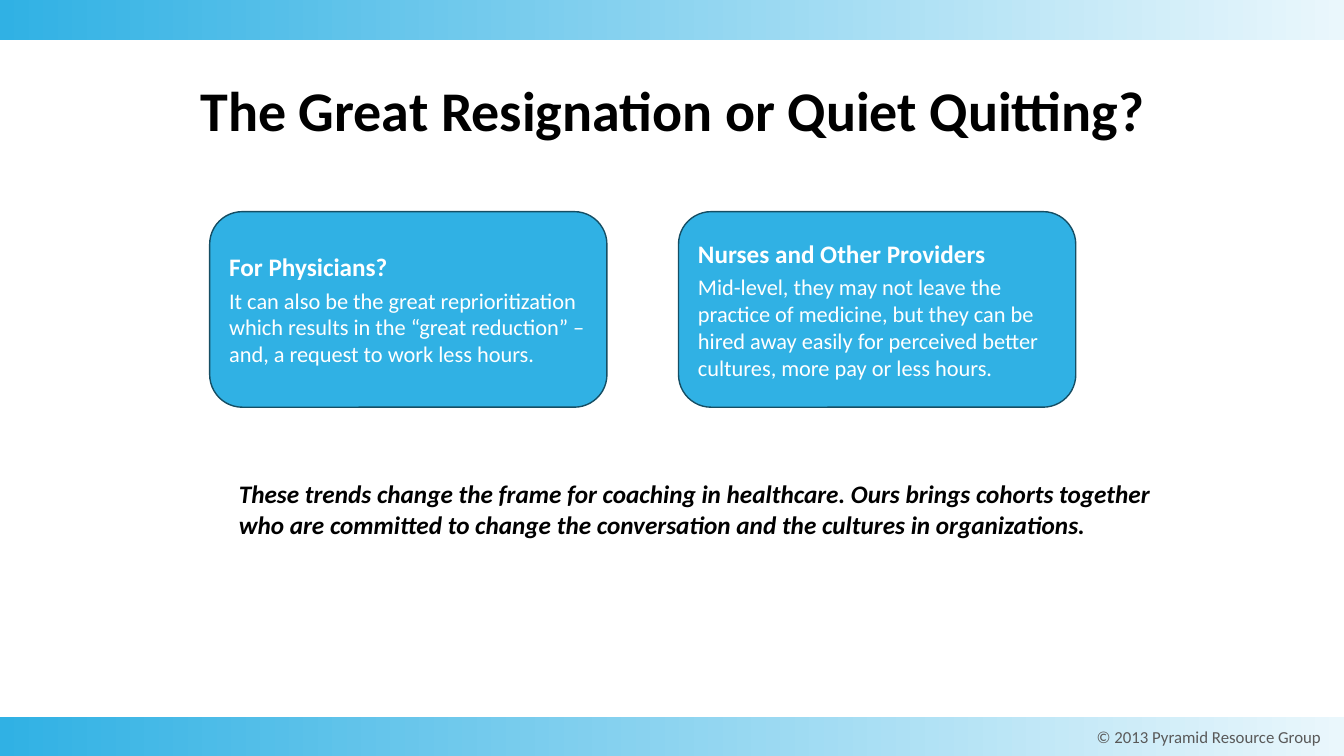
from pptx import Presentation
from pptx.dml.color import RGBColor
from pptx.enum.shapes import MSO_SHAPE as Shape
from pptx.enum.text import MSO_ANCHOR as Anchor, PP_ALIGN as Align
from pptx.util import Inches, Pt

# Content
TITLE = "The Great Resignation or Quiet Quitting?"
CARDS = [
    ("For Physicians?",
     "It can also be the great reprioritization which results in the “great reduction” – "
     "and, a request to work less hours."),
    ("Nurses and Other Providers",
     "Mid-level, they may not leave the practice of medicine, but they can be hired away "
     "easily for perceived better cultures, more pay or less hours."),
]
CONCLUSION = ("These trends change the frame for coaching in healthcare. Ours brings cohorts "
              "together who are committed to change the conversation and the cultures in "
              "organizations.")
COPYRIGHT = "© 2013 Pyramid Resource Group"

# Layout in inches
WIDTH, HEIGHT = 13.33, 7.5
BAND_HEIGHT = 0.4
BAND_TOPS = (HEIGHT - BAND_HEIGHT + 0.01, 0)
CARD_LEFT, CARD_TOP, CARD_WIDTH, CARD_HEIGHT, CARD_GAP = 2.08, 2.1, 3.94, 1.94, 0.71
FOOTER_WIDTH = 2.68

BLUE, PALE_BLUE, DARK_BLUE = "30B1E4", "EAF7FC", "154E64"
WHITE, BLACK, GRAY = "FFFFFF", "000000", "595959"


def color(hex_value):
    return RGBColor.from_string(hex_value)


def style(paragraph, size, hex_value, bold=False, italic=False, align=Align.LEFT):
    paragraph.alignment = align
    for run in paragraph.runs:
        font = run.font
        font.name, font.size = "Calibri", Pt(size)
        font.bold, font.italic = bold, italic
        font.color.rgb = color(hex_value)


def add_shape(slide, kind, *box):
    shape = slide.shapes.add_shape(kind, *map(Inches, box))
    shape.shadow.inherit = False
    return shape


def add_band(slide, top):
    band = add_shape(slide, Shape.RECTANGLE, 0, top, WIDTH, BAND_HEIGHT)
    band.line.fill.background()
    band.fill.gradient()
    band.fill.gradient_angle = 0
    for stop, hex_value, position in zip(band.fill.gradient_stops, (BLUE, PALE_BLUE), (0, 1)):
        stop.color.rgb = color(hex_value)
        stop.position = position


def add_text(slide, box, text, anchor=Anchor.TOP, **look):
    frame = slide.shapes.add_textbox(*map(Inches, box)).text_frame
    frame.word_wrap = True
    frame.vertical_anchor = anchor
    frame.text = text
    style(frame.paragraphs[0], **look)
    return frame.paragraphs[0]


def add_card(slide, column, heading, body):
    left = CARD_LEFT + column * (CARD_WIDTH + CARD_GAP)
    card = add_shape(slide, Shape.ROUNDED_RECTANGLE, left, CARD_TOP, CARD_WIDTH, CARD_HEIGHT)
    card.fill.solid()
    card.fill.fore_color.rgb = color(BLUE)
    card.line.color.rgb = color(DARK_BLUE)
    card.line.width = Pt(1)
    frame = card.text_frame
    frame.word_wrap = True
    frame.vertical_anchor = Anchor.MIDDLE
    frame.text = heading
    style(frame.paragraphs[0], 18, WHITE, bold=True)
    paragraph = frame.add_paragraph()
    paragraph.text = body
    paragraph.space_before = Pt(3.5)
    style(paragraph, 16, WHITE)


presentation = Presentation()
presentation.slide_width, presentation.slide_height = Inches(WIDTH), Inches(HEIGHT)
slide = presentation.slides.add_slide(presentation.slide_layouts[6])

# Bands and copyright line
for top in BAND_TOPS:
    add_band(slide, top)
add_text(slide, (WIDTH - FOOTER_WIDTH, BAND_TOPS[0], FOOTER_WIDTH, BAND_HEIGHT), COPYRIGHT,
         Anchor.MIDDLE, size=12, hex_value=GRAY, align=Align.CENTER)

# Title
title = add_text(slide, (0.92, BAND_HEIGHT, 11.5, 1.45), TITLE, Anchor.MIDDLE,
                 size=40, hex_value=BLACK, bold=True, align=Align.CENTER)
title.line_spacing = 0.9

# Cards
for column, (heading, body) in enumerate(CARDS):
    add_card(slide, column, heading, body)

# Conclusion
add_text(slide, (2.27, 4.7, 9.39, 0.71), CONCLUSION,
         size=18, hex_value=BLACK, bold=True, italic=True)

presentation.save("out.pptx")
